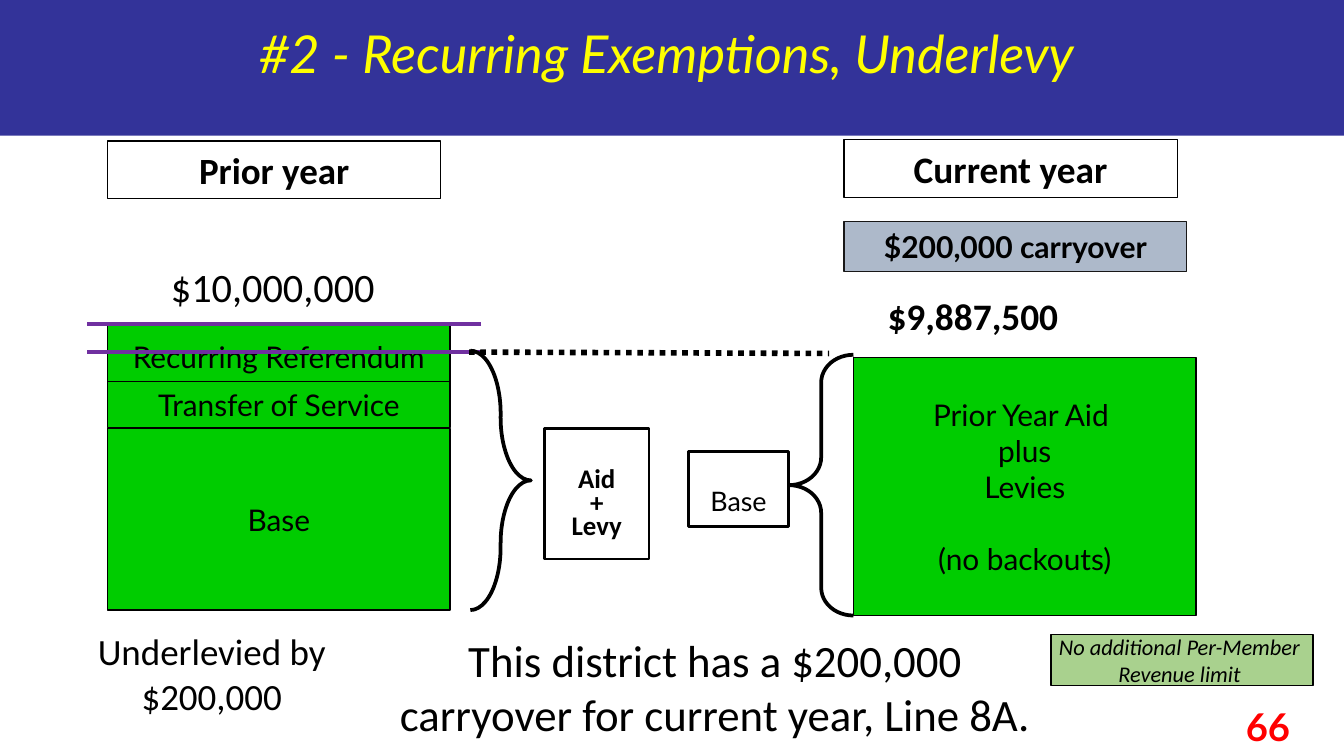
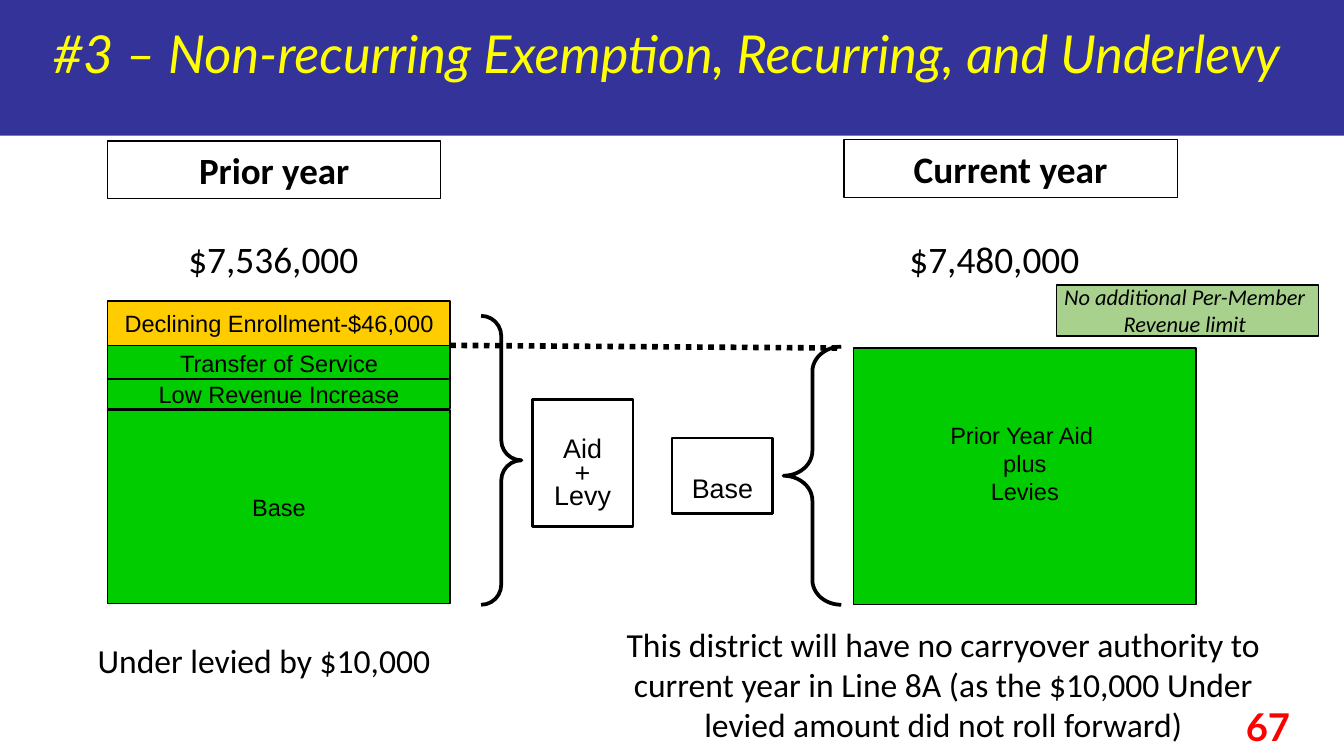
from dataclasses import dataclass
from typing import Optional

from lxml import etree
from pptx import Presentation
from pptx.dml.color import RGBColor
from pptx.enum.dml import MSO_LINE
from pptx.enum.shapes import MSO_CONNECTOR, MSO_SHAPE
from pptx.enum.text import MSO_ANCHOR, PP_ALIGN
from pptx.oxml.ns import qn
from pptx.slide import Slide
from pptx.util import Inches, Pt

RECTANGLE = MSO_SHAPE.RECTANGLE
RIGHT_BRACE = MSO_SHAPE.RIGHT_BRACE
LEFT_BRACE = MSO_SHAPE.LEFT_BRACE
STRAIGHT = MSO_CONNECTOR.STRAIGHT
DOTTED = MSO_LINE.ROUND_DOT
MIDDLE, TOP = MSO_ANCHOR.MIDDLE, MSO_ANCHOR.TOP
CENTER = PP_ALIGN.CENTER

SLIDE_WIDTH = Inches(10)
SLIDE_HEIGHT = SLIDE_WIDTH * 9 // 16

BLACK, RED, YELLOW = "000000", "FF0000", "FFFF00"
NAVY, PURPLE = "333399", "7030A0"
GREEN, PALE_GREEN, GOLD = "00CC00", "A9D18E", "FFCC00"
BLUE_GREY, CHARCOAL = "ADB9CA", "181717"

PRIOR_LEFT, CURRENT_LEFT, BAR_WIDTH = 0.8, 6.35, 2.55
TAG_PITCH = 12.5


@dataclass(frozen=True)
class Box:
    """A text with an optional fill and outline; each line is a paragraph."""
    text: str
    at: tuple[float, float, float, float]
    size: float
    font: str = "Calibri"
    color: str = BLACK
    bold: bool = False
    italic: bool = False
    fill: Optional[str] = None
    outline: Optional[str] = None
    outline_width: float = 0.75
    middle: bool = False
    wrap: bool = True
    top_inset: float = 0.05
    bottom_inset: float = 0.05
    line_pitch: Optional[float] = None
    gap_before_last: float = 0


@dataclass(frozen=True)
class Brace:
    at: tuple[float, float, float, float]
    curl: float
    opens_left: bool


@dataclass(frozen=True)
class Rule:
    start: tuple[float, float]
    end: tuple[float, float]
    color: str
    width: float
    dotted: bool = False


@dataclass(frozen=True)
class Scenario:
    title: str
    number: int
    boxes: list[Box]
    rules: list[Rule]
    braces: list[Brace]


def rgb(value: str) -> RGBColor:
    return RGBColor.from_string(value)


def heading(text: str, left: float, top: float, size: float) -> Box:
    return Box(text, (left, top, 2.48, 0.43), size, bold=True, outline=BLACK)


def bar(text: str, top: float, height: float, size: float, font: str,
        left: float = PRIOR_LEFT, fill: str = GREEN,
        bottom_inset: float = 0.05, gap_before_last: float = 0) -> Box:
    return Box(text, (left, top, BAR_WIDTH, height), size, font, fill=fill,
               outline=BLACK, middle=True, wrap=False,
               bottom_inset=bottom_inset, gap_before_last=gap_before_last)


def tag(text: str, at: tuple[float, float, float, float], font: str,
        top_inset: float, bold: bool = False) -> Box:
    """A small framed label beside a brace, set with tight lines."""
    return Box(text, at, 14.4, font, bold=bold, outline=BLACK,
               outline_width=1.5, middle=True, top_inset=top_inset,
               line_pitch=TAG_PITCH)


def limit_note(left: float, top: float) -> Box:
    return Box("No additional Per-Member \nRevenue limit ",
               (left, top, 1.95, 0.38), 12, italic=True, fill=PALE_GREEN,
               outline=BLACK, middle=True, wrap=False)


def draw_box(slide: Slide, box: Box) -> None:
    place = [Inches(length) for length in box.at]
    if box.fill or box.outline:
        shape = slide.shapes.add_shape(RECTANGLE, *place)
        shape.shadow.inherit = False
        if box.fill:
            shape.fill.solid()
            shape.fill.fore_color.rgb = rgb(box.fill)
        else:
            shape.fill.background()
        if box.outline:
            shape.line.color.rgb = rgb(box.outline)
            shape.line.width = Pt(box.outline_width)
        else:
            shape.line.fill.background()
    else:
        shape = slide.shapes.add_textbox(*place)

    frame = shape.text_frame
    frame.text = box.text
    frame.word_wrap = box.wrap
    frame.vertical_anchor = MIDDLE if box.middle else TOP
    frame.margin_top = Inches(box.top_inset)
    frame.margin_bottom = Inches(box.bottom_inset)
    for paragraph in frame.paragraphs:
        paragraph.alignment = CENTER
        if box.line_pitch:
            paragraph.line_spacing = Pt(box.line_pitch)
        for run in paragraph.runs:
            run.font.name = box.font
            run.font.size = Pt(box.size)
            run.font.bold = box.bold
            run.font.italic = box.italic
            run.font.color.rgb = rgb(box.color)
    if box.gap_before_last:
        frame.paragraphs[-1].space_before = Pt(box.gap_before_last)


def draw_rule(slide: Slide, rule: Rule) -> None:
    ends = [Inches(length) for length in rule.start + rule.end]
    connector = slide.shapes.add_connector(STRAIGHT, *ends)
    connector.line.color.rgb = rgb(rule.color)
    connector.line.width = Pt(rule.width)
    if rule.dotted:
        connector.line.dash_style = DOTTED
    etree.SubElement(connector._element.spPr, qn("a:effectLst"))


def draw_brace(slide: Slide, brace: Brace) -> None:
    preset = RIGHT_BRACE if brace.opens_left else LEFT_BRACE
    shape = slide.shapes.add_shape(preset, *[Inches(n) for n in brace.at])
    shape.adjustments[0] = brace.curl
    shape.adjustments[1] = 0.5
    shape.shadow.inherit = False
    shape.fill.background()
    shape.line.color.rgb = rgb(BLACK)
    shape.line.width = Pt(2)


def draw_frame(slide: Slide, title: str, number: int) -> None:
    """Draw what every slide shares: title band, page number, headings."""
    for box in (
        Box(title, (0, 0, 10, 1.01), 28, "Lato", YELLOW, italic=True,
            fill=NAVY, middle=True, bottom_inset=0.27),
        Box(str(number), (8.87, 5.18, 1.13, 0.45), 20.5, "Lato", RED,
            bold=True),
        heading("Prior year", PRIOR_LEFT, 1.05, 19.8),
        heading("Current year", 6.28, 1.04, 20),
    ):
        draw_box(slide, box)


SCENARIOS = [
    Scenario(
        "#2 - Recurring Exemptions, Underlevy ", 66,
        boxes=[
            Box("$10,000,000", (0.72, 1.9, 2.62, 0.46), 21.6),
            bar("Recurring Referendum", 2.42, 0.46, 16, "Lato"),
            bar("Transfer of Service", 2.84, 0.34, 16, "Lato"),
            bar("Base", 3.19, 1.35, 16, "Lato"),
            Box("Underlevied by $200,000", (0.33, 4.63, 2.49, 0.77), 19.8),
            tag("Aid\n+\nLevy", (4.05, 3.19, 0.78, 0.97), "Calibri", 0.23,
                bold=True),
            bar("Prior Year Aid \nplus\nLevies\n(no backouts)", 2.66, 1.92,
                16, "Lato", left=CURRENT_LEFT, gap_before_last=19.2),
            Box("$200,000 carryover", (6.28, 1.65, BAR_WIDTH, 0.37), 16.1,
                "Lato", bold=True, fill=BLUE_GREY, outline=CHARCOAL),
            Box("$9,887,500", (4.74, 2.13, 5, 0.44), 20, bold=True),
            limit_note(7.82, 4.72),
            Box("This district has a $200,000 carryover for current year, "
                "Line 8A.", (2.82, 4.66, 5, 0.91), 24),
            tag("Base", (5.12, 3.36, 0.75, 0.56), "Lato", 0.29),
        ],
        rules=[
            Rule((3.58, 2.41), (0.65, 2.41), PURPLE, 2.25),
            Rule((3.58, 2.62), (0.65, 2.62), PURPLE, 2.25),
            Rule((3.49, 2.62), (6.17, 2.63), BLACK, 3, dotted=True),
        ],
        braces=[
            Brace((3.5, 2.61, 0.45, 1.93), 1.04, opens_left=True),
            Brace((5.87, 2.64, 0.48, 1.94), 0.43, opens_left=False),
        ],
    ),
    Scenario(
        "#3 – Non-recurring Exemption, Recurring, and Underlevy ", 67,
        boxes=[
            Box("$7,536,000", (0.95, 1.71, 2.17, 0.44), 20),
            Box("$7,480,000", (6.16, 1.71, 2.48, 0.44), 20),
            bar("Declining Enrollment-$46,000", 2.24, 0.33, 12.6, "Arial",
                fill=GOLD),
            bar("Transfer of Service", 2.57, 0.27, 12.6, "Arial"),
            bar("Low Revenue Increase", 2.82, 0.22, 12.6, "Arial"),
            bar("Base", 3.05, 1.44, 12.6, "Arial"),
            tag("Aid\n+\nLevy", (3.96, 2.97, 0.75, 0.95), "Arial", 0.24),
            Box("Under levied by $10,000", (0.2, 4.71, 3.53, 0.4), 18),
            bar("Prior Year Aid \nplus\nLevies", 2.59, 1.91, 12.6, "Arial",
                left=CURRENT_LEFT, bottom_inset=0.25),
            tag("Base", (5, 3.26, 0.75, 0.56), "Arial", 0.29),
            Box("This district will have no carryover authority to current "
                "year in Line 8A (as the $10,000 Under levied amount did "
                "not roll forward)", (4.52, 4.59, 5, 1.01), 18),
            limit_note(7.86, 2.12),
        ],
        rules=[Rule((3.35, 2.57), (6.27, 2.59), BLACK, 3, dotted=True)],
        braces=[
            Brace((3.58, 2.35, 0.3, 2.15), 0.5, opens_left=True),
            Brace((5.83, 2.58, 0.43, 1.92), 0.43, opens_left=False),
        ],
    ),
]


def main() -> None:
    deck = Presentation()
    deck.slide_width = SLIDE_WIDTH
    deck.slide_height = SLIDE_HEIGHT
    blank = deck.slide_layouts[6]
    for scenario in SCENARIOS:
        slide = deck.slides.add_slide(blank)
        draw_frame(slide, scenario.title, scenario.number)
        for box in scenario.boxes:
            draw_box(slide, box)
        for rule in scenario.rules:
            draw_rule(slide, rule)
        for brace in scenario.braces:
            draw_brace(slide, brace)
    deck.save("out.pptx")


if __name__ == "__main__":
    main()
